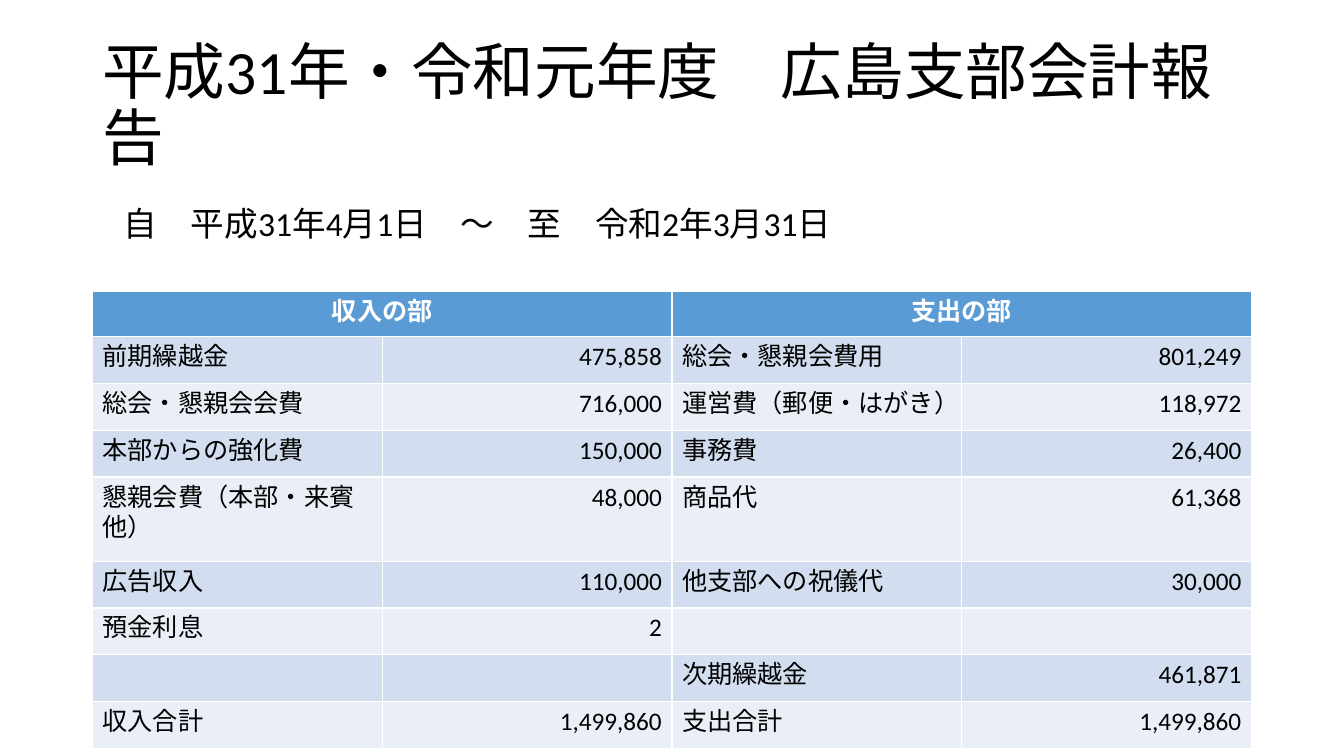
import pptx
import pptx.dml.color
import pptx.enum.lang
import pptx.enum.text
import pptx.util
import lxml.etree
from pptx.util import Cm

REPORT_TITLE = "平成31年・令和元年度　広島支部会計報告"
PERIOD = "自　平成31年4月1日　～　至　令和2年3月31日"
SECTIONS = ["収入の部", "支出の部"]
ENTRIES = [
    ("前期繰越金", "475,858", "総会・懇親会費用", "801,249"),
    ("総会・懇親会会費", "716,000", "運営費（郵便・はがき）", "118,972"),
    ("本部からの強化費", "150,000", "事務費", "26,400"),
    ("懇親会費（本部・来賓他）", "48,000", "商品代", "61,368"),
    ("広告収入", "110,000", "他支部への祝儀代", "30,000"),
    ("預金利息", "2", "", ""),
    ("", "", "次期繰越金", "461,871"),
    ("収入合計", "1,499,860", "支出合計", "1,499,860"),
]

THEME = {
    "font": "Calibri",
    "title_size": 44, "period_size": 24, "table_size": 18,
    "text": "000000", "header_text": "FFFFFF", "header_fill": "5B9BD5",
    "bands": ["D2DEEF", "EAEFF7"],
}
HEADER_HEIGHT, ENTRY_HEIGHT, TWO_LINE_HEIGHT = Cm(1.13), Cm(1.18), Cm(2.12)
LABEL_CAPACITY = 11  # characters on one line of a label cell
ALIGN = pptx.enum.text.PP_ALIGN
ANCHOR = pptx.enum.text.MSO_ANCHOR


def rgb(value):
    return pptx.dml.color.RGBColor.from_string(value)


def write(frame, text, size, color=THEME["text"], bold=False, align=ALIGN.LEFT):
    paragraph = frame.paragraphs[0]
    paragraph.text = text
    paragraph.alignment = align
    for run in paragraph.runs:
        run.font.name = THEME["font"]
        run.font.size = pptx.util.Pt(size)
        run.font.bold = bold
        run.font.color.rgb = rgb(color)
        run.font.language_id = pptx.enum.lang.MSO_LANGUAGE_ID.JAPANESE
        east_asian = lxml.etree.SubElement(
            run.font._element, pptx.oxml.ns.qn("a:ea"))
        east_asian.set("typeface", THEME["font"])
    return paragraph


def add_text(slide, box, text, size, anchor):
    frame = slide.shapes.add_textbox(*box).text_frame
    frame.word_wrap = True
    frame.vertical_anchor = anchor
    return write(frame, text, size)


def size_last_line(paragraph, size):
    """Give the open line after a closing line break its own type size."""
    end = lxml.etree.SubElement(paragraph._p, pptx.oxml.ns.qn("a:endParaRPr"))
    end.set("sz", str(size * 100))


def fill_cell(cell, fill, text, **style):
    cell.fill.solid()
    cell.fill.fore_color.rgb = rgb(fill)
    write(cell.text_frame, text, THEME["table_size"], **style)


def add_accounts(slide):
    columns = len(ENTRIES[0])
    heights = [HEADER_HEIGHT] + [
        TWO_LINE_HEIGHT if max(map(len, entry)) > LABEL_CAPACITY else ENTRY_HEIGHT
        for entry in ENTRIES]
    accounts = slide.shapes.add_table(
        len(heights), columns, Cm(2.33), Cm(7.35), Cm(29.21), sum(heights)).table
    for row, height in zip(accounts.rows, heights):
        row.height = height

    span = columns // len(SECTIONS)
    for index, section in enumerate(SECTIONS):
        first = accounts.cell(0, index * span)
        first.merge(accounts.cell(0, index * span + span - 1))
        fill_cell(first, THEME["header_fill"], section,
                  color=THEME["header_text"], bold=True, align=ALIGN.CENTER)

    for row, entry in enumerate(ENTRIES, start=1):
        band = THEME["bands"][(row - 1) % 2]
        for column, value in enumerate(entry):
            cell = accounts.cell(row, column)
            is_amount = column % 2 == 1
            fill_cell(cell, band, value,
                      align=ALIGN.RIGHT if is_amount else ALIGN.LEFT)
            if not is_amount:
                cell.margin_right = Cm(0)


def main():
    deck = pptx.Presentation()
    deck.slide_width, deck.slide_height = Cm(33.87), Cm(19.05)
    slide = deck.slides.add_slide(deck.slide_layouts[6])

    title = add_text(slide, (Cm(2.33), Cm(1.8), Cm(29.74), Cm(3.68)),
                     REPORT_TITLE + "\v", THEME["title_size"], ANCHOR.MIDDLE)
    title.line_spacing = 0.9
    size_last_line(title, THEME["title_size"])
    add_accounts(slide)
    add_text(slide, (Cm(2.87), Cm(4.98), Cm(21.44), Cm(1.28)),
             PERIOD, THEME["period_size"], ANCHOR.TOP)
    deck.save("out.pptx")


if __name__ == "__main__":
    main()
